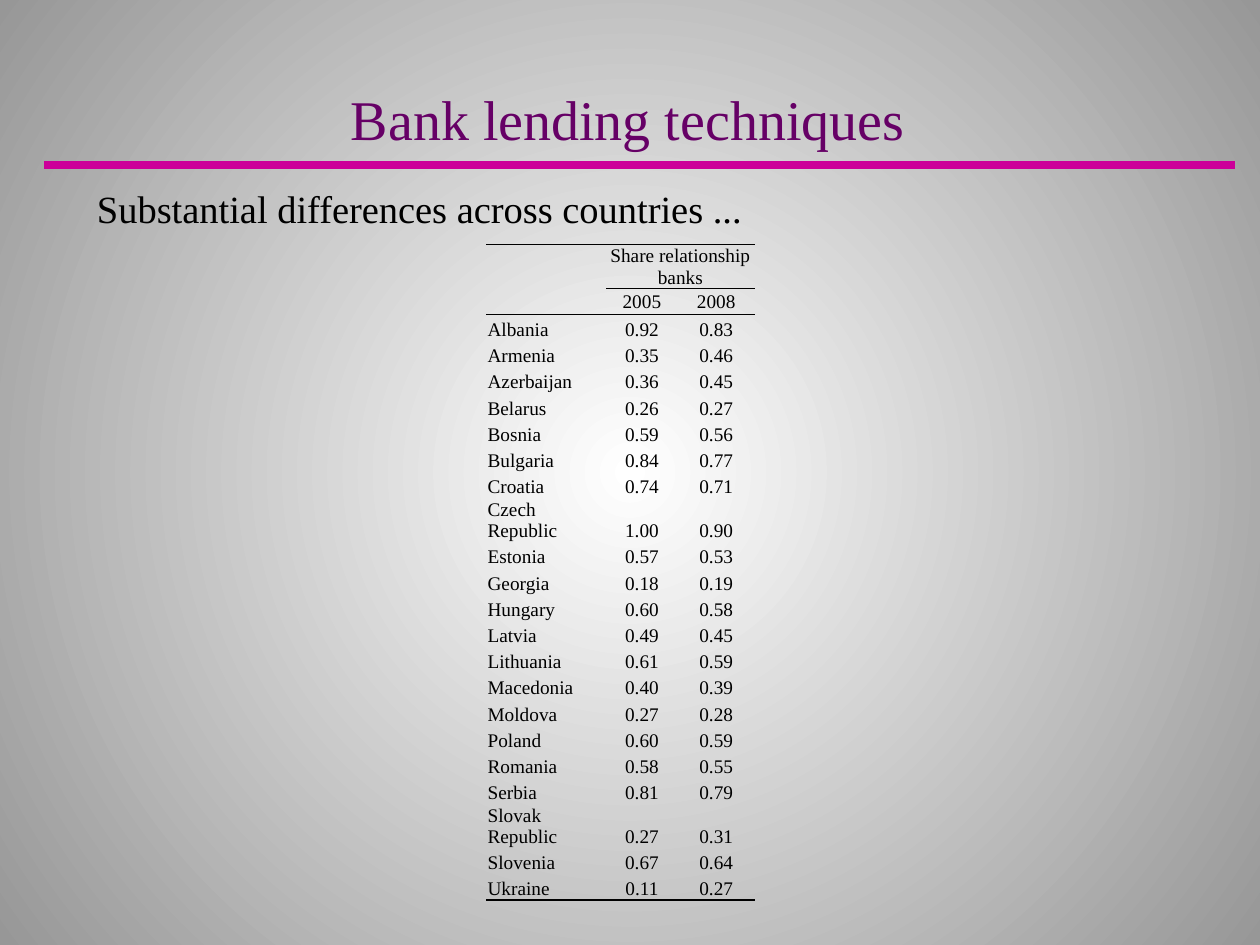
from lxml.etree import SubElement
from pptx import Presentation
from pptx.dml.color import RGBColor
from pptx.enum.shapes import MSO_CONNECTOR
from pptx.enum.text import MSO_ANCHOR, PP_ALIGN
from pptx.oxml import parse_xml
from pptx.oxml.ns import nsdecls, qn
from pptx.util import Inches, Pt

TITLE = "Bank lending techniques "
SUBTITLE = "Substantial differences across countries ..."
HEADERS = [("", "Share relationship banks", ""), ("", "2005", "2008")]
SHARES = [
    ("Albania", "0.92", "0.83"),
    ("Armenia", "0.35", "0.46"),
    ("Azerbaijan", "0.36", "0.45"),
    ("Belarus", "0.26", "0.27"),
    ("Bosnia", "0.59", "0.56"),
    ("Bulgaria", "0.84", "0.77"),
    ("Croatia", "0.74", "0.71"),
    ("Czech Republic", "1.00", "0.90"),
    ("Estonia", "0.57", "0.53"),
    ("Georgia", "0.18", "0.19"),
    ("Hungary", "0.60", "0.58"),
    ("Latvia", "0.49", "0.45"),
    ("Lithuania", "0.61", "0.59"),
    ("Macedonia", "0.40", "0.39"),
    ("Moldova", "0.27", "0.28"),
    ("Poland", "0.60", "0.59"),
    ("Romania", "0.58", "0.55"),
    ("Serbia", "0.81", "0.79"),
    ("Slovak Republic", "0.27", "0.31"),
    ("Slovenia", "0.67", "0.64"),
    ("Ukraine", "0.11", "0.27"),
]
COLUMN_WIDTHS = (0.95, 0.57, 0.61)
TABLE_HEIGHT = 4.79
CELL_FORMAT = {
    "margin_left": Inches(0.01),
    "margin_right": Inches(0.01),
    "margin_top": Inches(0.01),
    "margin_bottom": 0,
}
PLAIN_TABLE_STYLE = "{2D5ABB26-0587-4C30-8999-92F81FD0307C}"


def color(value):
    return RGBColor.from_string(value)


def apply(target, values):
    for name, value in values.items():
        setattr(target, name, value)


def write(paragraph, text, size, ink, align):
    paragraph.alignment = align
    if text:
        run = paragraph.add_run()
        run.text = text
        apply(run.font, {"size": Pt(size), "name": "Times New Roman"})
        run.font.color.rgb = color(ink)
    ending = SubElement(paragraph._p, qn("a:endParaRPr"), sz=str(size * 100))
    SubElement(ending, qn("a:latin"), typeface="Times New Roman")


def add_text(slide, box, text, size, ink, align, frame_format):
    frame = slide.shapes.add_textbox(*map(Inches, box)).text_frame
    apply(frame, {"word_wrap": True, **frame_format})
    write(frame.paragraphs[0], text, size, ink, align)


def paint_background(slide):
    fill = slide.background.fill
    fill.gradient()
    for stop, (position, shade) in zip(fill.gradient_stops, [(0, "FFFFFF"), (1, "979797")]):
        stop.position = position
        stop.color.rgb = color(shade)
    gradient = slide.element.find(".//" + qn("a:gradFill"))
    gradient.replace(gradient.find(qn("a:lin")), parse_xml(
        f'<a:path {nsdecls("a")} path="circle">'
        '<a:fillToRect l="50000" t="50000" r="50000" b="50000"/></a:path>'))


def set_border(cell, side, width):
    cell._tc.get_or_add_tcPr().insert(0, parse_xml(
        f'<a:ln{side} {nsdecls("a")} w="{Pt(width)}"><a:solidFill>'
        f'<a:srgbClr val="000000"/></a:solidFill></a:ln{side}>'))


def add_rule(slide):
    rule = slide.shapes.add_connector(
        MSO_CONNECTOR.STRAIGHT, Inches(0.35), Inches(1.31), Inches(9.8), Inches(1.31))
    rule.line.color.rgb = color("CC0099")
    rule.line.width = Pt(4.5)
    SubElement(rule._element.spPr, qn("a:effectLst"))


def add_share_table(slide):
    rows = HEADERS + SHARES
    frame = slide.shapes.add_table(
        len(rows), len(COLUMN_WIDTHS), Inches(3.86), Inches(1.94),
        Inches(sum(COLUMN_WIDTHS)), Inches(TABLE_HEIGHT))
    table = frame.table
    apply(table, {"first_row": False, "horz_banding": False})
    table._tbl.tblPr.find(qn("a:tableStyleId")).text = PLAIN_TABLE_STYLE
    for column, width in zip(table.columns, COLUMN_WIDTHS):
        column.width = Inches(width)
    anchors = [MSO_ANCHOR.TOP, MSO_ANCHOR.MIDDLE] + [MSO_ANCHOR.BOTTOM] * len(SHARES)
    for r, (texts, anchor) in enumerate(zip(rows, anchors)):
        table.rows[r].height = Inches(TABLE_HEIGHT / len(rows))
        for c, text in enumerate(texts):
            cell = table.cell(r, c)
            apply(cell, {**CELL_FORMAT, "vertical_anchor": anchor})
            cell.fill.background()
            paragraph = cell.text_frame.paragraphs[0]
            paragraph.line_spacing = Pt(12.2)
            align = PP_ALIGN.CENTER if c else PP_ALIGN.LEFT
            write(paragraph, text, 11, "000000", align)
    table.cell(0, 1).merge(table.cell(0, 2))
    for c in range(len(COLUMN_WIDTHS)):
        if c:
            set_border(table.cell(0, c), "B", 0.5)
        set_border(table.cell(0, c), "T", 1)
        set_border(table.cell(1, c), "B", 0.5)
        set_border(table.cell(len(rows) - 1, c), "B", 1)


def main():
    deck = Presentation()
    apply(deck, {"slide_width": Inches(10), "slide_height": Inches(7.5)})
    slide = deck.slides.add_slide(deck.slide_layouts[6])
    paint_background(slide)
    add_text(slide, (0.17, 1.42, 9.83, 6.08), SUBTITLE, 22, "000000", PP_ALIGN.LEFT,
             {"margin_left": Inches(0.6), "margin_top": Inches(0.05)})
    add_text(slide, (0.33, 0.25, 9.42, 1), TITLE, 32, "660066", PP_ALIGN.CENTER,
             {"vertical_anchor": MSO_ANCHOR.BOTTOM})
    add_rule(slide)
    add_share_table(slide)
    deck.save("out.pptx")


if __name__ == "__main__":
    main()
